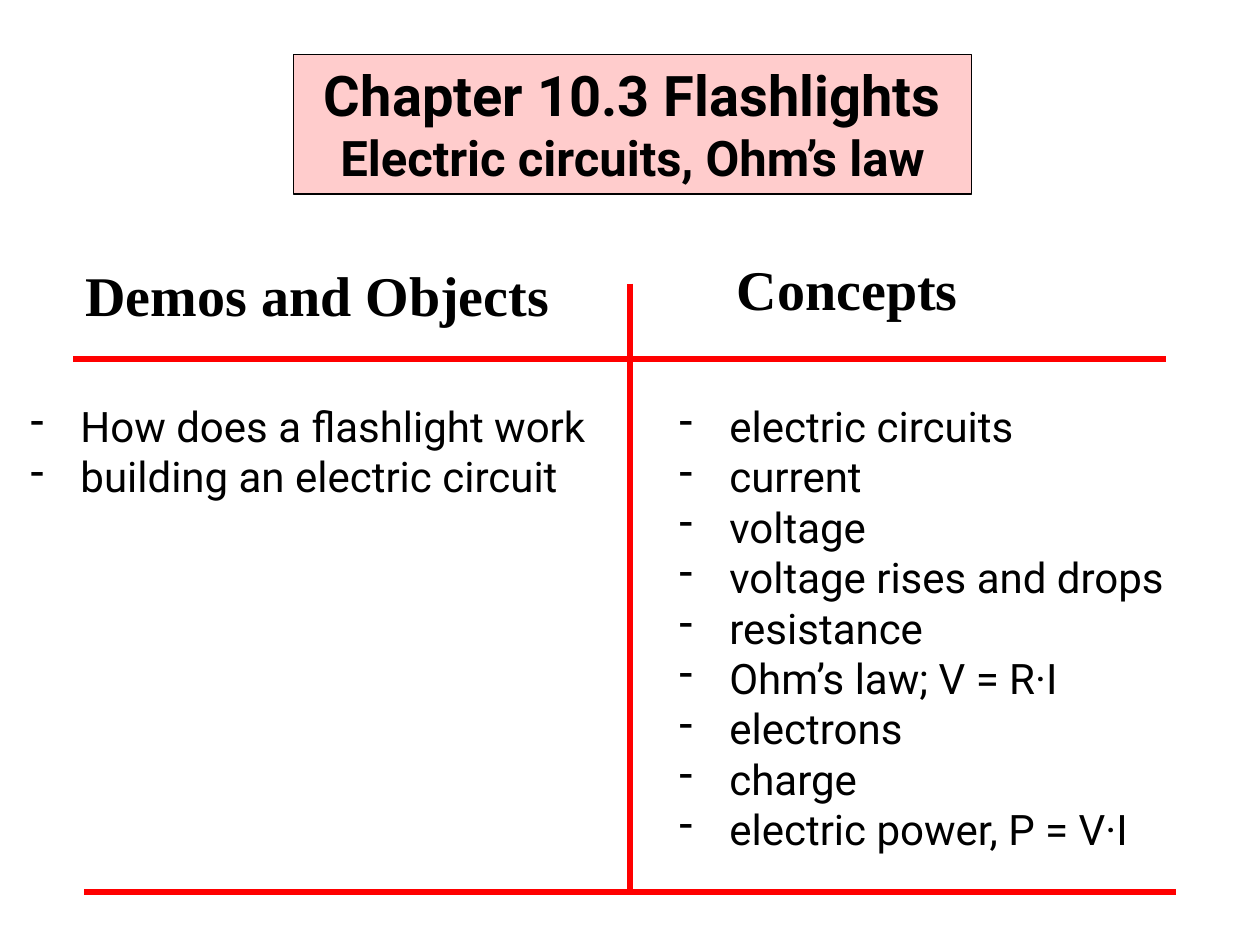
from lxml import etree
from pptx import Presentation
from pptx.dml.color import RGBColor
from pptx.enum.shapes import MSO_CONNECTOR, MSO_SHAPE
from pptx.enum.text import MSO_ANCHOR, MSO_AUTO_SIZE, PP_ALIGN
from pptx.oxml.ns import qn
from pptx.util import Inches, Pt

STRAIGHT = MSO_CONNECTOR.STRAIGHT
RECT = MSO_SHAPE.RECTANGLE
TOP = MSO_ANCHOR.TOP
GROW = MSO_AUTO_SIZE.SHAPE_TO_FIT_TEXT
LEFT, CENTER = PP_ALIGN.LEFT, PP_ALIGN.CENTER

BLACK, RED, PINK = "000000", "FF0000", "FFCCCC"
SANS, SERIF = "Roboto", "Times New Roman"

DEMOS = ["How does a flashlight work", "building an electric circuit"]
IDEAS = [
    "electric circuits",
    "current",
    "voltage",
    "voltage rises and drops",
    "resistance",
    "Ohm’s law; V = R·I",
    "electrons",
    "charge",
    "electric power, P = V·I",
]


def color(code):
    return RGBColor.from_string(code)


def apply(target, values):
    for name, value in values.items():
        setattr(target, name, value)


class Board:
    title = {"name": SANS, "size": Pt(32), "bold": True}
    topic = {"name": SANS, "size": Pt(28), "bold": True}
    head = {"name": SERIF, "size": Pt(32), "bold": True}
    item = {"name": SANS, "size": Pt(24), "bold": False}
    indent = Inches(0.4)

    def __init__(self, slide):
        self.slide = slide

    def fill(self, shape, rows, align=LEFT, wrap=True):
        frame = shape.text_frame
        apply(frame, {"word_wrap": wrap, "auto_size": GROW,
                      "vertical_anchor": TOP})
        for i, (text, style) in enumerate(rows):
            par = frame.add_paragraph() if i else frame.paragraphs[0]
            par.alignment = align
            run = par.add_run()
            run.text = text
            apply(run.font, style)
            run.font.color.rgb = color(BLACK)
        return frame.paragraphs

    def panel(self, box, rows):
        shape = self.slide.shapes.add_shape(RECT, *map(Inches, box))
        shape.shadow.inherit = False
        shape.fill.solid()
        shape.fill.fore_color.rgb = color(PINK)
        shape.line.color.rgb = color(BLACK)
        shape.line.width = Pt(0.75)
        self.fill(shape, rows, CENTER, False)

    def text(self, box, rows):
        shape = self.slide.shapes.add_textbox(*map(Inches, box))
        return self.fill(shape, rows)

    def bullets(self, box, items):
        for par in self.text(box, [(item, self.item) for item in items]):
            props = par._p.get_or_add_pPr()
            props.set("marL", str(self.indent))
            props.set("indent", str(-self.indent))
            etree.SubElement(props, qn("a:buChar"), char="-")

    def rule(self, *ends):
        line = self.slide.shapes.add_connector(STRAIGHT, *map(Inches, ends))
        line.line.color.rgb = color(RED)
        line.line.width = Pt(3)
        etree.SubElement(line._element.spPr, qn("a:effectLst"))


def main():
    deck = Presentation()
    deck.slide_width, deck.slide_height = Inches(10), Inches(7.5)
    board = Board(deck.slides.add_slide(deck.slide_layouts[6]))

    board.panel((2.33, 0.43, 5.38, 1.11), [
        ("Chapter 10.3 Flashlights", board.title),
        ("Electric circuits, Ohm’s law", board.topic),
    ])
    board.bullets((0.14, 3.13, 4.69, 0.9), DEMOS)
    board.bullets((5.29, 3.13, 4.31, 3.69), IDEAS)

    board.rule(0.67, 7.08, 9.33, 7.08)
    board.rule(0.58, 2.85, 9.25, 2.85)
    board.rule(5, 2.25, 5, 7.08)

    board.text((0.58, 2.02, 4.02, 0.63), [("Demos and Objects", board.head)])
    board.text((5.75, 1.97, 2.15, 0.63), [("Concepts", board.head)])
    deck.save("out.pptx")


if __name__ == "__main__":
    main()
